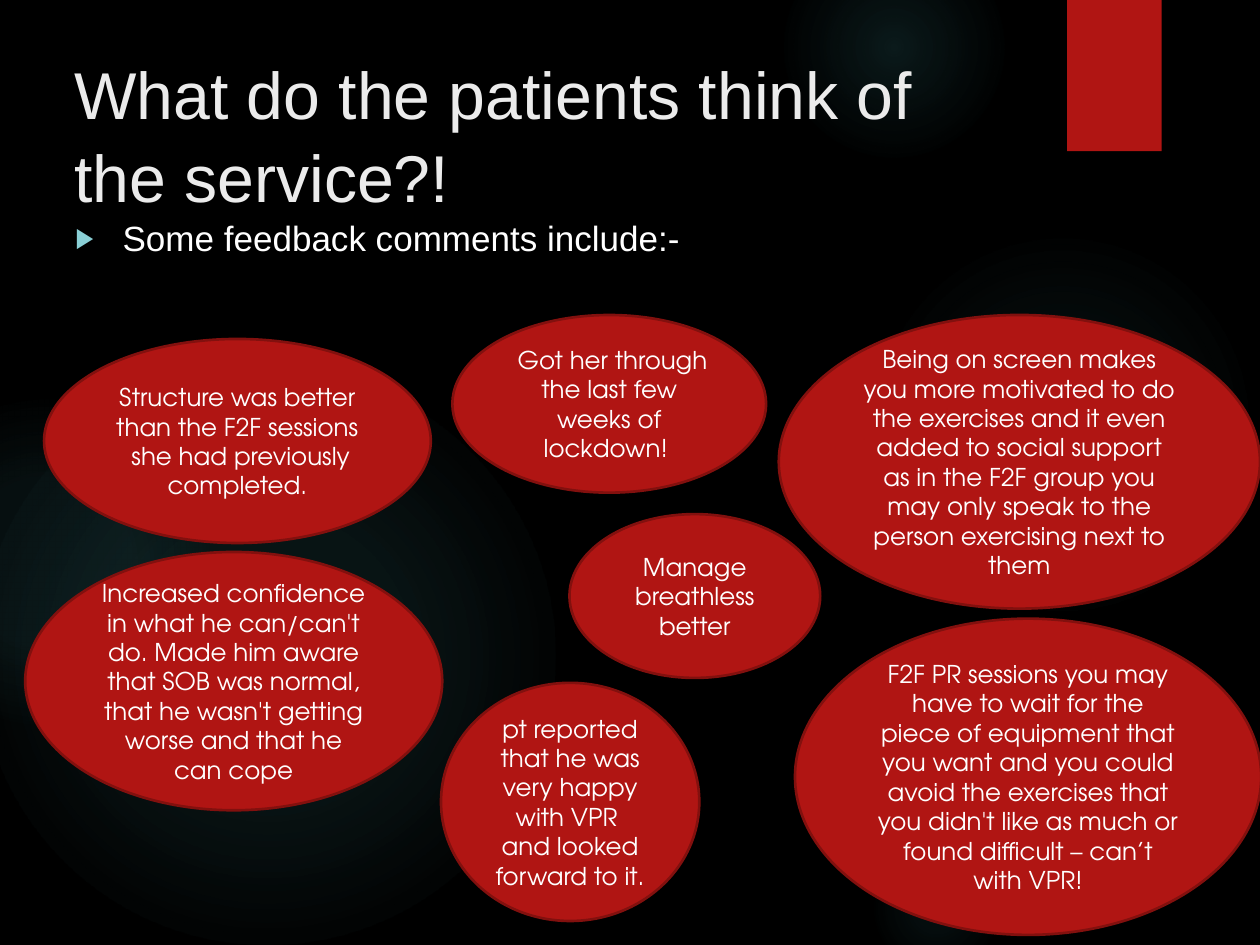
"""Build the slide of patient feedback on the service."""
from typing import Any, NamedTuple

from lxml.etree import SubElement
from pptx import Presentation
from pptx.dml.color import RGBColor
from pptx.enum.shapes import MSO_SHAPE
from pptx.enum.text import MSO_ANCHOR, PP_ALIGN
from pptx.oxml import parse_xml
from pptx.oxml.ns import nsdecls, qn
from pptx.util import Pt

BLACK = RGBColor(0x00, 0x00, 0x00)
WHITE = RGBColor(0xFF, 0xFF, 0xFF)
PALE = RGBColor(0xEB, 0xEB, 0xEB)
RED = RGBColor(0xB0, 0x15, 0x13)
DARK = RGBColor(0x82, 0x10, 0x0E)
TEAL = RGBColor(0x50, 0xB9, 0xC1)
AQUA = RGBColor(0x8A, 0xD0, 0xD6)

HEAD = {"name": "Arial", "size": Pt(37.8)}
BODY = {"name": "Arial", "size": Pt(20)}
NOTE = {"name": "TeX Gyre Adventor", "size": Pt(14)}
FRAME = {"word_wrap": True, "vertical_anchor": MSO_ANCHOR.TOP}
MID = {"word_wrap": True, "vertical_anchor": MSO_ANCHOR.MIDDLE}


class Box(NamedTuple):
    """Hold a place and size in points."""

    left: float
    top: float
    width: float
    height: float


class Glow(NamedTuple):
    """Hold a round glow with its (stop, opacity) pairs in percent."""

    left: float
    top: float
    size: float
    stops: tuple[tuple[int, int], ...]


class Quote(NamedTuple):
    """Hold one patient comment and its bubble."""

    box: Box
    text: str


GLOWS = (
    Glow(496, 131.8, 221.8, ((0, 7), (36, 6), (69, 0))),
    Glow(447.8, -36, 126, ((0, 14), (36, 7), (73, 0))),
    Glow(496, 480.2, 77.8, ((0, 9), (36, 5), (66, 0))),
    Glow(-12.2, 210.2, 329.8, ((0, 11), (36, 10), (75, 0))),
    Glow(-66.2, 228.2, 185.8, ((0, 8), (36, 8), (72, 0))),
)
QUOTES = (
    Quote(Box(25.2, 193.7, 221, 116.6),
          "Structure was better than the F2F sessions  she had previously completed."),
    Quote(Box(258.5, 180, 179.3, 101.5),
          " Got her through the last few weeks of lockdown! "),
    Quote(Box(445, 180, 275, 167.8),
          "Being on screen makes you more motivated to do the exercises and it even "
          "added to social support as in the F2F group you may only speak to the "
          "person exercising next to them"),
    Quote(Box(14.4, 315.4, 238.3, 147.6),
          "Increased confidence in what he can/can't do. Made him aware that SOB was "
          "normal, that he wasn't getting worse and that he can cope"),
    Quote(Box(252, 390.2, 147.6, 136.1),
          "pt reported that he was very happy with VPR  and looked forward to it."),
    Quote(Box(325.4, 293.8, 143.3, 93.6), "Manage breathless better"),
    Quote(Box(454.3, 353.5, 266.4, 180.7),
          "F2F PR sessions you may have to wait for the piece of equipment that you "
          "want and you could avoid the exercises that you didn't like as much or "
          "found difficult – can’t with VPR!"),
)


def apply(item: Any, values: dict[str, Any]) -> None:
    """Set each named value on the item."""
    for name, value in values.items():
        setattr(item, name, value)


def write(shape: Any, text: str, frame: dict, font: dict, color: RGBColor) -> Any:
    """Put one paragraph in the shape and return it."""
    apply(shape.text_frame, frame)
    para = shape.text_frame.paragraphs[0]
    run = para.add_run()
    run.text = text
    apply(run.font, font)
    run.font.color.rgb = color
    return para


def draw(slide: Any, kind: MSO_SHAPE, box: Box) -> Any:
    """Add a flat red shape with no line."""
    shape = slide.shapes.add_shape(kind, *map(Pt, box))
    shape.shadow.inherit = False
    shape.fill.solid()
    shape.fill.fore_color.rgb = RED
    shape.line.fill.background()
    return shape


def shine(slide: Any, glow: Glow) -> None:
    """Add a glow that fades out from its centre."""
    box = Box(glow.left, glow.top, glow.size, glow.size)
    shape = draw(slide, MSO_SHAPE.OVAL, box)
    stops = "".join(
        f'<a:gs pos="{pos * 1000}"><a:srgbClr val="{TEAL}">'
        f'<a:alpha val="{alpha * 1000}"/></a:srgbClr></a:gs>'
        for pos, alpha in glow.stops
    )
    fill = parse_xml(
        f'<a:gradFill {nsdecls("a")} rotWithShape="1"><a:gsLst>{stops}</a:gsLst>'
        '<a:path path="circle"><a:fillToRect l="50000" t="50000" r="50000" '
        'b="50000"/></a:path></a:gradFill>'
    )
    props = shape.fill._xPr
    props.replace(props.find(qn("a:solidFill")), fill)


def bubble(slide: Any, quote: Quote) -> None:
    """Add a comment in an oval bubble."""
    shape = draw(slide, MSO_SHAPE.OVAL, quote.box)
    shape.line.color.rgb = DARK
    shape.line.width = Pt(1.5)
    para = write(shape, quote.text, MID, NOTE, WHITE)
    para.alignment = PP_ALIGN.CENTER


def label(slide: Any, box: Box, text: str, font: dict, color: RGBColor) -> Any:
    """Add a text box and return its paragraph."""
    shape = slide.shapes.add_textbox(*map(Pt, box))
    return write(shape, text, FRAME, font, color)


def bullet(para: Any) -> None:
    """Give the paragraph a hanging arrow bullet."""
    props = para._p.get_or_add_pPr()
    apply(para, {"space_before": Pt(10)})
    props.set("marL", str(Pt(27)))
    props.set("indent", str(Pt(-27)))
    tint = SubElement(props, qn("a:buClr"))
    SubElement(tint, qn("a:srgbClr"), val=str(AQUA))
    SubElement(props, qn("a:buSzPct"), val="80000")
    SubElement(props, qn("a:buFont"), typeface="Arial")
    SubElement(props, qn("a:buChar"), char="▶")


def main() -> None:
    """Build and save the slide."""
    deck = Presentation()
    apply(deck, {"slide_width": Pt(720), "slide_height": Pt(540)})
    slide = deck.slides.add_slide(deck.slide_layouts[6])
    slide.background.fill.solid()
    slide.background.fill.fore_color.rgb = BLACK
    for glow in GLOWS:
        shine(slide, glow)
    draw(slide, MSO_SHAPE.RECTANGLE, Box(609.8, 0, 54, 86.4))
    title = label(slide, Box(35.3, 24.5, 555.8, 85),
                  "What do the patients think of the service?!", HEAD, PALE)
    title.line_spacing = 1.05
    bullet(label(slide, Box(36, 120.2, 588.2, 389.5),
                 "Some feedback comments include:-", BODY, WHITE))
    for quote in QUOTES:
        bubble(slide, quote)
    deck.save("out.pptx")


if __name__ == "__main__":
    main()
